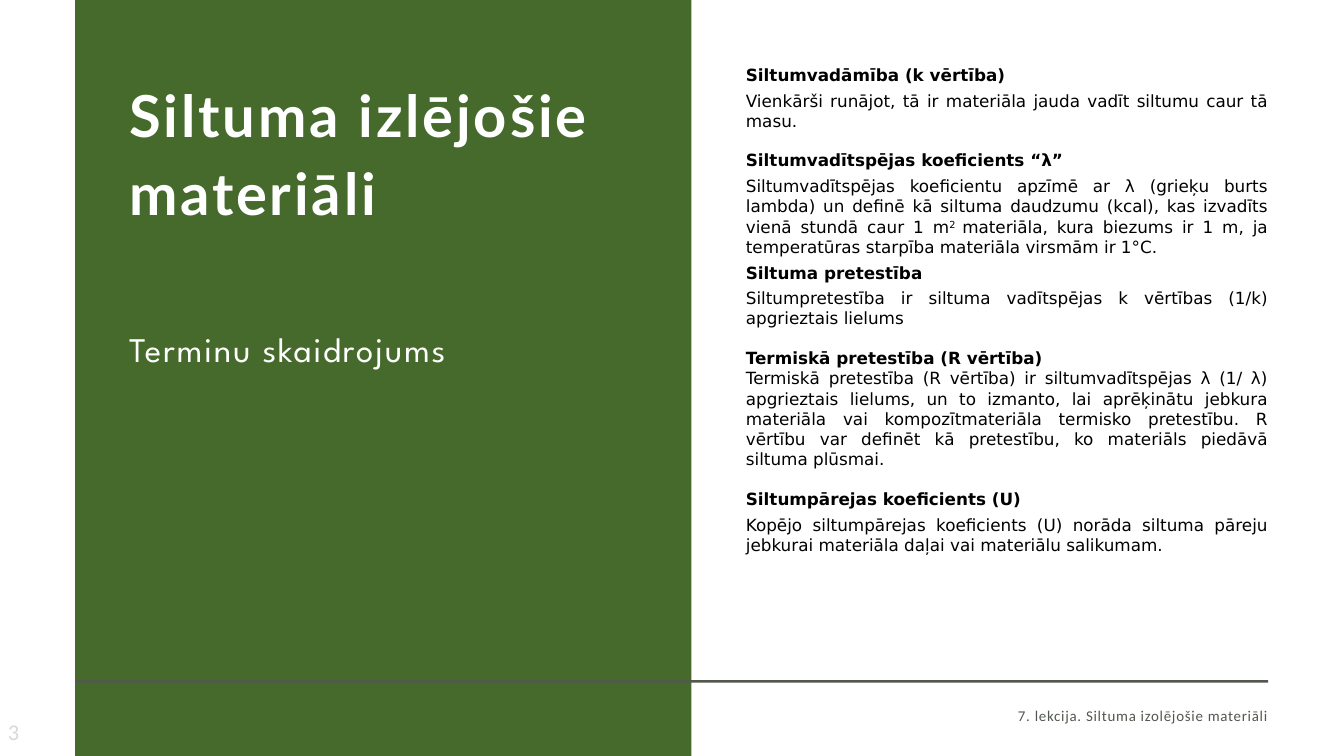
from dataclasses import dataclass

from pptx import Presentation
from pptx.dml.color import RGBColor as RGB
from pptx.enum.shapes import MSO_SHAPE as SHAPE
from pptx.enum.text import MSO_ANCHOR as ANCHOR, MSO_AUTO_SIZE as AUTO, PP_ALIGN as ALIGN
from pptx.util import Inches, Pt


@dataclass(frozen=True)
class Style:
    font: str
    size: float
    color: str
    spacing: float = 0  # between letters, points
    leading: float = 0  # exact line height, points


class Theme:
    green, gray = "456A2C", "52584D"
    title = Style("Lato", 62, "FFFFFF", 3.1, 83.7)
    subtitle = Style("League Spartan", 37, "FFFFFF", 1.9, 48.1)
    body = Style("DejaVu Sans", 18, "000000")
    footer = Style("Calibri", 16, gray, 0.8, 22.4)
    number = Style("Calibri", 24, "D9D9D9", 1.2)


# Content
TITLE = "Siltuma izlējošie materiāli"
SUBTITLE = "Terminu skaidrojums"
FOOTER = "7. lekcija. Siltuma izolējošie materiāli"
NUMBER = "3"
TIGHT, GAP = 6, 21  # space after a paragraph, points
# Term, space after it, explanation (superscript between ^ marks), space after it
TERMS = [
    ("Siltumvadāmība (k vērtība)", TIGHT,
     "Vienkārši runājot, tā ir materiāla jauda vadīt siltumu caur tā masu.", GAP),
    ("Siltumvadītspējas koeficients “λ”", TIGHT,
     "Siltumvadītspējas koeficientu apzīmē ar λ (grieķu burts lambda) un definē kā "
     "siltuma daudzumu (kcal), kas izvadīts vienā stundā caur 1 m^2 ^materiāla, kura "
     "biezums ir 1 m, ja temperatūras starpība materiāla virsmām ir 1°C.", TIGHT),
    ("Siltuma pretestība", TIGHT,
     "Siltumpretestība ir siltuma vadītspējas k vērtības (1/k) apgrieztais lielums", GAP),
    ("Termiskā pretestība (R vērtība)", 0,
     "Termiskā pretestība (R vērtība) ir siltumvadītspējas λ (1/ λ) apgrieztais lielums, "
     "un to izmanto, lai aprēķinātu jebkura materiāla vai kompozītmateriāla termisko "
     "pretestību. R vērtību var definēt kā pretestību, ko materiāls piedāvā siltuma "
     "plūsmai.", GAP),
    ("Siltumpārejas koeficients (U)", TIGHT,
     "Kopējo siltumpārejas koeficients (U) norāda siltuma pāreju jebkurai materiāla "
     "daļai vai materiālu salikumam.", TIGHT),
]

# Grid, inches
WIDTH, HEIGHT = 20, 11.25
PANEL_LEFT, PANEL_WIDTH = 1.12, 9.17
RIGHT = 18.87  # right margin line
TITLE_LEFT, TITLE_WIDTH = 1.92, 7.56
BODY_LEFT, FOOTER_LEFT = 11.1, 10.56


def place(sp, left, top, width, height):
    sp.left, sp.top, sp.width, sp.height = map(Inches, (left, top, width, height))


def frame(sp, anchor=ANCHOR.TOP, margin=0):
    tf = sp.text_frame
    tf.word_wrap, tf.auto_size, tf.vertical_anchor = True, AUTO.NONE, anchor
    tf.margin_left = tf.margin_right = Inches(margin)
    tf.margin_top = tf.margin_bottom = Inches(margin / 2)
    return tf


def write(p, text, style, align=ALIGN.LEFT, bold=False, after=0):
    p.alignment, p.space_before, p.space_after = align, Pt(0), Pt(after)
    if style.leading:
        p.line_spacing = Pt(style.leading)
    font = p.font
    font.name, font.size, font.bold = style.font, Pt(style.size), bold
    font.color.rgb = RGB.from_string(style.color)
    for i, part in enumerate(text.split("^")):
        r = p.add_run()
        r.text = part
        if style.spacing:
            r.font._rPr.set("spc", str(round(style.spacing * 100)))
        if i % 2:
            r.font._rPr.set("baseline", "30000")


def add_bar(s, color, *box):
    sp = s.shapes.add_shape(SHAPE.RECTANGLE, *map(Inches, box))
    sp.shadow.inherit = False
    sp.fill.solid()
    sp.fill.fore_color.rgb = RGB.from_string(color)
    sp.line.fill.background()
    return sp


def add_text(s, box, text, style, align=ALIGN.LEFT, **layout):
    tf = frame(s.shapes.add_textbox(*map(Inches, box)), **layout)
    write(tf.paragraphs[0], text, style, align)


def main():
    prs = Presentation()
    prs.slide_width, prs.slide_height = Inches(WIDTH), Inches(HEIGHT)
    s = prs.slides.add_slide(prs.slide_layouts[5])

    # Green panel and footer rule, kept behind the title
    panel = add_bar(s, Theme.green, PANEL_LEFT, 0, PANEL_WIDTH, HEIGHT)
    rule = add_bar(s, Theme.gray, PANEL_LEFT, 10.12, RIGHT - PANEL_LEFT, 0.04)
    title = s.shapes.title
    for bar in (panel, rule):
        title._element.addprevious(bar._element)

    # Title and subtitle
    place(title, TITLE_LEFT, 1.05, TITLE_WIDTH, 2.26)
    write(frame(title).paragraphs[0], TITLE, Theme.title, bold=True)
    add_text(s, (TITLE_LEFT, 4.83, TITLE_WIDTH, 0.67), SUBTITLE, Theme.subtitle)

    # Terms and their explanations
    box = (BODY_LEFT, 0.96, RIGHT - BODY_LEFT, 7.39)
    tf = frame(s.shapes.add_textbox(*map(Inches, box)))
    lines = [line for term, gap, meaning, after in TERMS
             for line in ((term, True, gap), (meaning, False, after))]
    for i, (text, bold, after) in enumerate(lines):
        p = tf.add_paragraph() if i else tf.paragraphs[0]
        write(p, text, Theme.body, ALIGN.JUSTIFY, bold, after)

    # Footer and slide number
    add_text(s, (FOOTER_LEFT, 10.47, RIGHT - FOOTER_LEFT, 0.29), FOOTER, Theme.footer,
             ALIGN.RIGHT)
    add_text(s, (0.02, 10.69, 2.33, 0.4), NUMBER, Theme.number,
             anchor=ANCHOR.MIDDLE, margin=0.1)

    prs.save("out.pptx")


if __name__ == "__main__":
    main()
